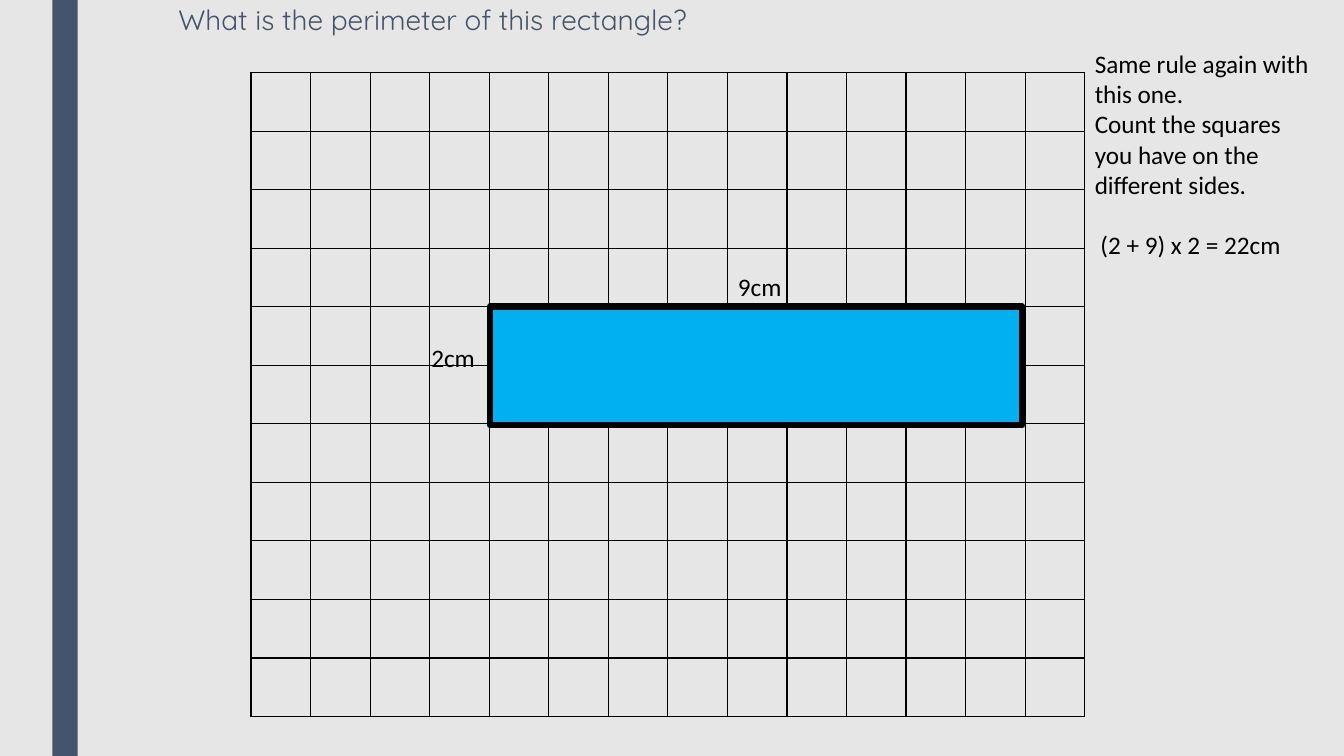
import pptx
import pptx.util
import pptx.dml.color
import pptx.enum.shapes
import pptx.oxml
import pptx.oxml.ns

Inches = pptx.util.Inches
Pt = pptx.util.Pt
RGBColor = pptx.dml.color.RGBColor
RECT = pptx.enum.shapes.MSO_SHAPE.RECTANGLE

GREY = RGBColor(0xE7, 0xE6, 0xE6)
SLATE = RGBColor(0x44, 0x54, 0x6A)
BLUE = RGBColor(0x00, 0xB0, 0xF0)
BLACK = RGBColor(0, 0, 0)

COLS, ROWS = 14, 11
EDGE = (
    '<a:{side} %s w="12700"><a:solidFill><a:srgbClr val="{color}"/>'
    '</a:solidFill></a:{side}>' % pptx.oxml.ns.nsdecls("a")
)


def add_box(slide, box, fill, line=None):
    """Draw a filled rectangle, with an outline if a width is given."""
    shape = slide.shapes.add_shape(RECT, *map(Inches, box))
    shape.shadow.inherit = False
    shape.fill.solid()
    shape.fill.fore_color.rgb = fill
    if line:
        shape.line.color.rgb = BLACK
        shape.line.width = Pt(line)
    else:
        shape.line.fill.background()


def add_text(slide, box, lines, size=18, font="Calibri", color=BLACK):
    """Write one paragraph per line and return the paragraphs."""
    frame = slide.shapes.add_textbox(*map(Inches, box)).text_frame
    frame.word_wrap = True
    frame.text = "\n".join(lines)
    for para in frame.paragraphs:
        para.font.size = Pt(size)
        para.font.name = font
        para.font.color.rgb = color
    return frame.paragraphs


def add_title(slide, box):
    """Write the question at the top of the slide."""
    para = add_text(slide, box, ["What is the perimeter of this rectangle?"],
                    20, "Quicksand", SLATE)[0]
    para.line_spacing = 0.94
    para.space_before = Pt(10)
    para.space_after = Pt(2)


def add_grid(slide, box):
    """Draw the squared paper as an empty table with black edges."""
    left, top, width, height = map(Inches, box)
    table = slide.shapes.add_table(ROWS, COLS, left, top, width, height).table
    table.first_row = table.horz_banding = False
    for col in table.columns:
        col.width = width // COLS
    for row in table.rows:
        row.height = height // ROWS
    for cell in table.iter_cells():
        props = cell._tc.get_or_add_tcPr()
        for side in ("lnL", "lnR", "lnT", "lnB"):
            props.append(pptx.oxml.parse_xml(EDGE.format(side=side, color=BLACK)))
        cell.fill.background()


def add_figure(slide, box):
    """Draw the blue rectangle and label its two sides."""
    left, top, width, height = box
    add_box(slide, box, BLUE, 4.5)
    add_text(slide, (left - 0.68, top + 0.31, 2.57, 0.4), ["2cm"])
    add_text(slide, (left + 2.36, top - 0.4, 2.57, 0.4), ["9cm"])


def add_notes(slide, box):
    """Write the rule and the worked answer beside the grid."""
    paras = add_text(slide, box, [
        "Same rule again with this one.",
        "Count the squares you have on the different sides.",
        " (2 + 9) x 2 = 22cm",
    ])
    paras[-1].space_before = Pt(21.6)


def main():
    """Build the slide and save it."""
    deck = pptx.Presentation()
    deck.slide_width = Inches(13.33)
    deck.slide_height = Inches(7.5)
    slide = deck.slides.add_slide(deck.slide_layouts[6])
    slide.background.fill.solid()
    slide.background.fill.fore_color.rgb = GREY
    add_box(slide, (0.52, 0, 0.25, 7.5), SLATE)
    add_title(slide, (1.67, 0, 10, 1.78))
    add_grid(slide, (2.49, 0.72, 8.27, 6.39))
    add_figure(slide, (4.86, 3.04, 5.28, 1.18))
    add_notes(slide, (10.76, 0.43, 2.46, 2.52))
    deck.save("out.pptx")


if __name__ == "__main__":
    main()
